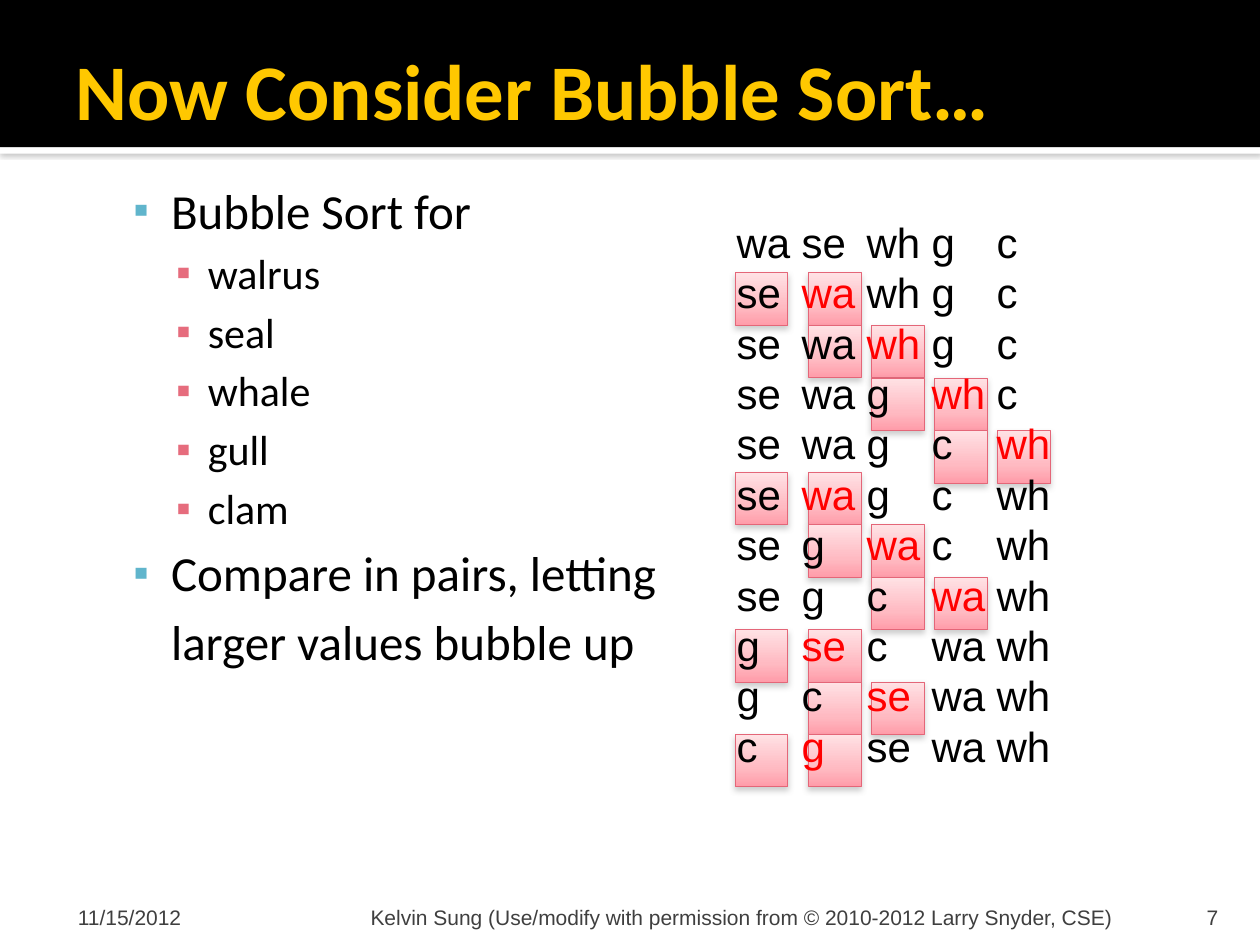
from copy import deepcopy
from lxml.etree import SubElement
from pptx import Presentation
from pptx.dml.color import RGBColor
from pptx.enum.shapes import MSO_SHAPE
from pptx.enum.text import MSO_ANCHOR, PP_ALIGN
from pptx.oxml.ns import qn
from pptx.util import Cm, Pt

BLACK = RGBColor(0x00, 0x00, 0x00)
WHITE = RGBColor(0xFF, 0xFF, 0xFF)
GOLD = RGBColor(0xFF, 0xC8, 0x00)
RED = RGBColor(0xFF, 0x00, 0x00)
GRAY = RGBColor(0x3F, 0x3F, 0x3F)
SHADE = RGBColor(0x80, 0x80, 0x80)
BLUE = RGBColor(0x60, 0xB5, 0xCC)
ROSE = RGBColor(0xE6, 0x6C, 0x7D)
EDGE = RGBColor(0xE4, 0x66, 0x78)
PINKS = [
    (0, RGBColor(0xFF, 0xE2, 0xE5)),
    (0.65, RGBColor(0xFF, 0xBA, 0xC2)),
    (1, RGBColor(0xFF, 0x9C, 0xA9)),
]

TOPICS = [
    ("Bubble Sort for", 1, True),
    ("walrus", 2, True),
    ("seal", 2, True),
    ("whale", 2, True),
    ("gull", 2, True),
    ("clam", 2, True),
    ("Compare in pairs, letting", 1, True),
    ("larger values bubble up", 1, False),
]
LEVELS = {1: (28, 2.03, 0.76, BLUE, 90), 2: (24, 2.77, 0.64, ROSE, 100)}

STEPS = [
    ("wa se wh g c", None),
    ("se wa wh g c", 1),
    ("se wa wh g c", 2),
    ("se wa g wh c", 3),
    ("se wa g c wh", 4),
    ("se wa g c wh", 1),
    ("se g wa c wh", 2),
    ("se g c wa wh", 3),
    ("g se c wa wh", 1),
    ("g c se wa wh", 2),
    ("c g se wa wh", 1),
]
PASSES = [(1.27, 4), (5.29, 3), (8.46, 2), (10.57, 1)]
COLS = [0.22, 1.7, 2.97, 4.24, 5.51]
PITCH = 1.31
CELL = 1.06


def add_rect(slide, x, y, w, h):
    rect = slide.shapes.add_shape(MSO_SHAPE.RECTANGLE, Cm(x), Cm(y), Cm(w), Cm(h))
    rect.shadow.inherit = False
    rect.line.fill.background()
    return rect


def add_shade(rect, alpha, blur, dist):
    effects = rect._element.spPr.find(qn("a:effectLst"))
    shade = SubElement(effects, qn("a:outerShdw"), blurRad=str(Pt(blur)),
                       dist=str(Pt(dist)), dir="5400000", rotWithShape="0")
    color = SubElement(shade, qn("a:srgbClr"), val=str(SHADE))
    SubElement(color, qn("a:alpha"), val=str(alpha * 1000))


def add_frame(slide, x, y, w, h, anchor=MSO_ANCHOR.TOP, left=0.25, top=0.13,
              right=0.25, bottom=0.13):
    frame = slide.shapes.add_textbox(Cm(x), Cm(y), Cm(w), Cm(h)).text_frame
    frame.word_wrap = True
    frame.vertical_anchor = anchor
    frame.margin_left, frame.margin_right = Cm(left), Cm(right)
    frame.margin_top, frame.margin_bottom = Cm(top), Cm(bottom)
    return frame


def next_para(frame, index):
    return frame.add_paragraph() if index else frame.paragraphs[0]


def set_font(para, name, size, color, bold=False):
    font = para.font
    font.name, font.size, font.bold = name, Pt(size), bold
    font.color.rgb = color


def add_header(slide, x, y, w, h):
    band = add_rect(slide, x, y + h, w, 0.13)
    band.fill.solid()
    band.fill.fore_color.rgb = WHITE
    add_shade(band, 60, 2.5, 0.8)
    bar = add_rect(slide, x, y, w, h)
    bar.fill.solid()
    bar.fill.fore_color.rgb = BLACK
    frame = add_frame(slide, x + 1.27, y + 0.42, w - 2.54, 2.75,
                      MSO_ANCHOR.MIDDLE, right=0.13)
    para = frame.paragraphs[0]
    para.text = "Now Consider Bubble Sort…"
    set_font(para, "Calibri", 45, GOLD, True)


def add_topics(slide, x, y, w, h):
    frame = add_frame(slide, x, y, w, h, left=0.15, top=0.25)
    for index, (text, level, marked) in enumerate(TOPICS):
        size, left, hang, color, scale = LEVELS[level]
        para = next_para(frame, index)
        para.text = text
        para.level = level - 1
        para.space_before = Pt(size * 0.2)
        set_font(para, "Calibri", size, BLACK)
        props = para._p.get_or_add_pPr()
        props.set("marL", str(Cm(left)))
        props.set("indent", str(-Cm(hang) if marked else 0))
        if marked:
            tint = SubElement(props, qn("a:buClr"))
            SubElement(tint, qn("a:srgbClr"), val=str(color))
            SubElement(props, qn("a:buSzPct"), val=str(scale * 1000))
            SubElement(props, qn("a:buFont"), typeface="Arial")
            SubElement(props, qn("a:buChar"), char="▪")
            props.append(props.find(qn("a:defRPr")))


def add_cell(slide, x, y):
    cell = add_rect(slide, x, y, CELL, CELL)
    cell.fill.gradient()
    first = cell._element.spPr.find(".//" + qn("a:gs"))
    first.addnext(deepcopy(first))
    for stop, (place, color) in zip(cell.fill.gradient_stops, PINKS):
        stop.position = place
        stop.color.rgb = color
    cell.fill.gradient_angle = 270
    cell.line.color.rgb = EDGE
    cell.line.width = Pt(0.5)
    add_shade(cell, 38, 3.5, 2)


def add_trace(slide, x, y, w, h):
    for top, count in PASSES:
        for row in range(count):
            for left in COLS[row:row + 2]:
                add_cell(slide, x + left, y + top + row * CELL)
    frame = add_frame(slide, x, y, w, h)
    for index, (text, moved) in enumerate(STEPS):
        para = next_para(frame, index)
        para.line_spacing = Pt(28.8)
        set_font(para, "Arial", 24, BLACK)
        props = para._p.get_or_add_pPr()
        stops = SubElement(props, qn("a:tabLst"))
        for col in range(1, len(COLS)):
            SubElement(stops, qn("a:tab"), pos=str(Cm(col * PITCH)), algn="l")
        props.append(props.find(qn("a:defRPr")))
        for col, word in enumerate(text.split()):
            run = para.add_run()
            run.text = "\t" + word if col else word
            if col == moved:
                run.font.color.rgb = RED


def add_footer(slide, x, y, h):
    parts = [
        ("11/15/2012", 0, 5.92, 0.3, 0.13, PP_ALIGN.LEFT),
        ("Kelvin Sung (Use/modify with permission from © 2010-2012 Larry Snyder, CSE)",
         6.07, 15.29, 0.13, 0.13, PP_ALIGN.LEFT),
        ("7", 21.51, 2.03, 0.25, 0.25, PP_ALIGN.RIGHT),
    ]
    for text, shift, w, left, right, align in parts:
        frame = add_frame(slide, x + shift, y, w, h, MSO_ANCHOR.BOTTOM,
                          left=left, right=right, bottom=0)
        para = frame.paragraphs[0]
        para.text = text
        para.alignment = align
        set_font(para, "Arial", 12, GRAY)


def main():
    deck = Presentation()
    deck.slide_width, deck.slide_height = Cm(25.4), Cm(19.05)
    slide = deck.slides.add_slide(deck.slide_layouts[6])
    add_header(slide, 0, 0, 25.4, 2.97)
    add_topics(slide, 1.27, 3.38, 22.86, 14.4)
    add_trace(slide, 14.6, 4.23, 7.62, 11.53)
    add_footer(slide, 1.27, 17.98, 0.76)
    deck.save("out.pptx")


if __name__ == "__main__":
    main()
